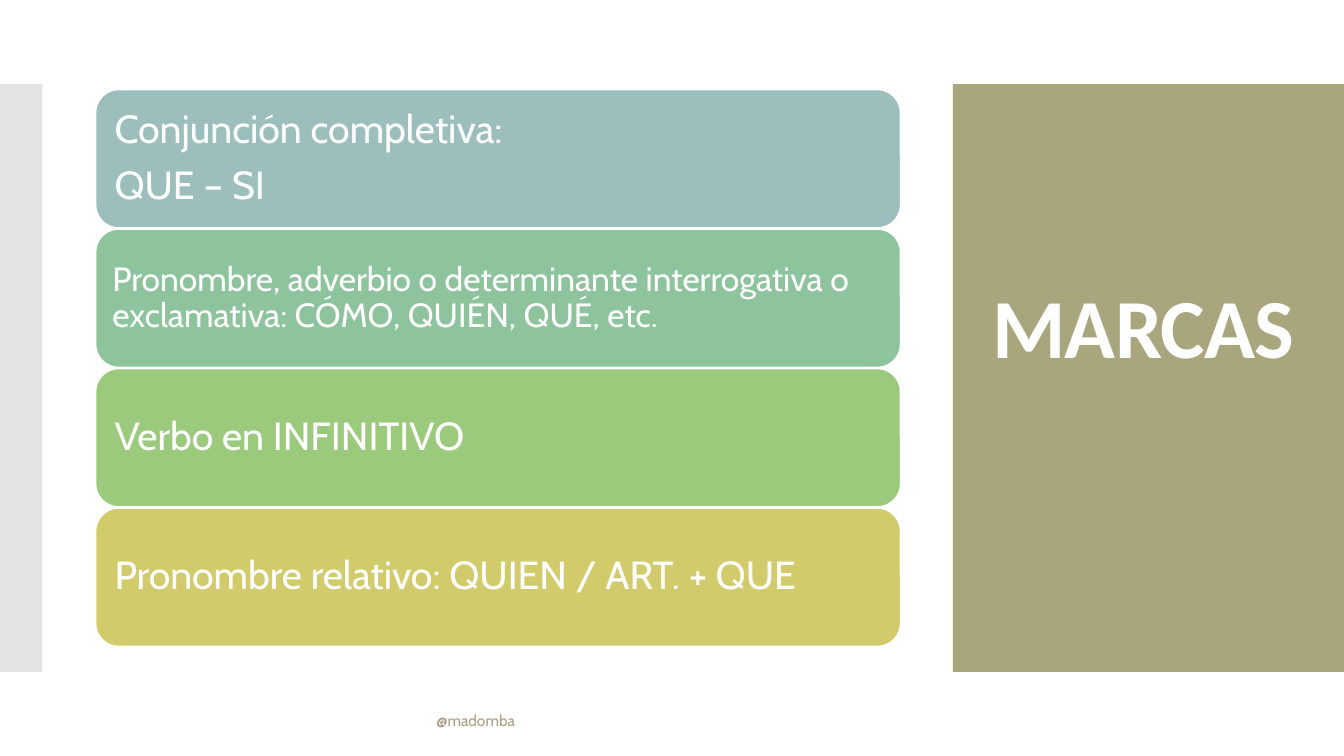
from lxml import etree
from pptx import Presentation
from pptx.dml.color import RGBColor
from pptx.enum.shapes import MSO_SHAPE
from pptx.enum.text import MSO_ANCHOR, PP_ALIGN
from pptx.oxml.ns import qn
from pptx.util import Inches, Pt

RECT, ROUNDED = MSO_SHAPE.RECTANGLE, MSO_SHAPE.ROUNDED_RECTANGLE
MIDDLE = MSO_ANCHOR.MIDDLE
LEFT, CENTER = PP_ALIGN.LEFT, PP_ALIGN.CENTER

THEME = {
    "panel": "A9A57C", "edge": "C8C8C8", "white": "FFFFFF", "credit": "A89D7F",
    "cards": ["9CBEBD", "8DC49D", "9BCA7D", "D2CB6C"],
    "body_font": "Cabin", "title_font": "Calibri",
    "title_size": 60, "large": 28, "medium": 24, "small": 11,
}

WIDTH, HEIGHT = 13.33, 7.5
BAND_TOP, BAND_HEIGHT = HEIGHT / 9, HEIGHT * 7 / 9
PANEL_LEFT, EDGE_WIDTH = 9.45, 0.42
CARD_LEFT, CARD_TOP, CARD_WIDTH, CARD_HEIGHT = 0.95, 0.89, 7.98, 1.37
CARD_STEP = CARD_HEIGHT + 0.014

CARDS = [
    (["Conjunción completiva:", "QUE – SI"], "large", 0.12),
    (["Pronombre, adverbio o determinante interrogativa o exclamativa: "
      "CÓMO, QUIÉN, QUÉ, etc."], "medium", 0.1),
    (["Verbo en INFINITIVO"], "large", 0.12),
    (["Pronombre relativo: QUIEN / ART. + QUE"], "large", 0.12),
]

deck = Presentation()
deck.slide_width, deck.slide_height = Inches(WIDTH), Inches(HEIGHT)
slide = deck.slides.add_slide(deck.slide_layouts[6])


def add_block(kind, left, top, width, height, color):
    block = slide.shapes.add_shape(
        kind, Inches(left), Inches(top), Inches(width), Inches(height))
    block.shadow.inherit = False
    block.fill.solid()
    block.fill.fore_color.rgb = RGBColor.from_string(color)
    block.line.fill.background()
    return block


def write(holder, lines, size, color="white", font="body_font", bold=False,
          align=LEFT, spacing=0.9, after=0, tracking=0,
          insets=(0.1, 0.05, 0.1, 0.05)):
    frame = holder.text_frame
    frame.word_wrap = True
    frame.vertical_anchor = MIDDLE
    (frame.margin_left, frame.margin_top,
     frame.margin_right, frame.margin_bottom) = map(Inches, insets)
    for index, line in enumerate(lines):
        paragraph = frame.add_paragraph() if index else frame.paragraphs[0]
        paragraph.alignment = align
        paragraph.line_spacing = spacing
        paragraph.space_after = Pt(after)
        run = paragraph.add_run()
        run.text = line
        run.font.name = THEME[font]
        run.font.size = Pt(THEME[size])
        run.font.bold = bold
        run.font.color.rgb = RGBColor.from_string(THEME[color])
        if tracking:
            run.font._element.set("spc", str(tracking))


add_block(RECT, PANEL_LEFT, BAND_TOP, WIDTH - PANEL_LEFT, BAND_HEIGHT, THEME["panel"])
heading = slide.shapes.add_textbox(
    Inches(9.73), Inches(1.23), Inches(3.22), Inches(5.03))
write(heading, ["MARCAS"], "title_size", font="title_font", bold=True,
      align=CENTER, tracking=-60, insets=(0.1, 0.05, 0.1, 0.96))

edge = add_block(RECT, 0, BAND_TOP, EDGE_WIDTH, BAND_HEIGHT, THEME["edge"])
edge_color = edge._element.spPr.find(qn("a:solidFill")).find(qn("a:srgbClr"))
etree.SubElement(edge_color, qn("a:alpha")).set("val", "50000")

for row, ((lines, size, inset), color) in enumerate(zip(CARDS, THEME["cards"])):
    card = add_block(ROUNDED, CARD_LEFT, CARD_TOP + row * CARD_STEP,
                     CARD_WIDTH, CARD_HEIGHT, color)
    card.line.color.rgb = RGBColor.from_string(THEME["white"])
    card.line.width = Pt(0.85)
    write(card, lines, size, after=THEME[size] * 0.35, insets=(inset,) * 4)

credit = slide.shapes.add_textbox(
    Inches(4.23), Inches(6.95), Inches(6.46), Inches(0.4))
write(credit, ["@madomba"], "small", color="credit", spacing=1.0)

deck.save("out.pptx")
